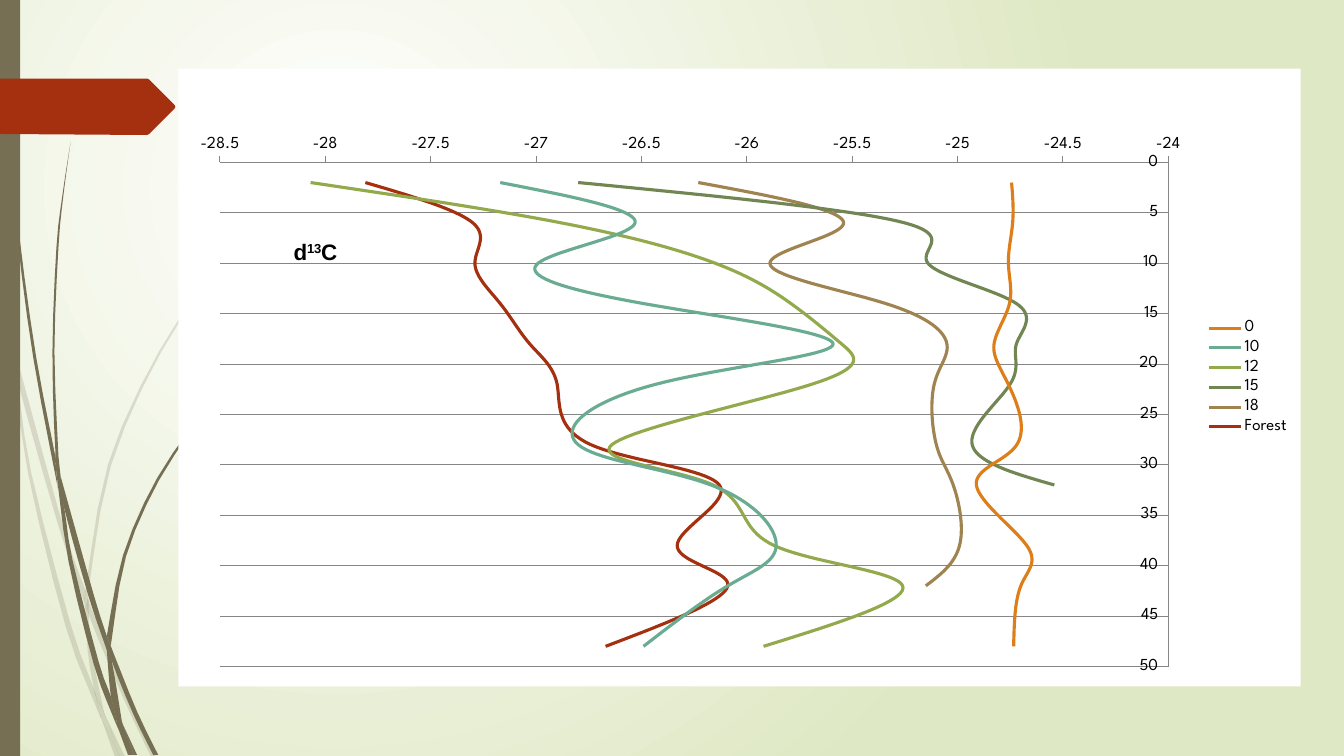
from lxml import etree
from pptx import Presentation
from pptx import util as u
from pptx.chart import data
from pptx.dml import color
from pptx.enum import chart as ec, shapes
from pptx.oxml import ns

THEME = {
    "white": "FFFFFF", "pale": "DFE8C4", "bark": "766F54", "red": "A53010",
    "ink": "000000", "grid": "868686",
    "lines": ["DE7E18", "6AAC91", "92AA4C", "728653", "9F8351", "A53010"],
    "font": "League Spartan", "head": "Arial",
    "base": 10, "label": 12, "title": 16, "stroke": 2.25, "thin": 0.75,
}

FAINT = [
    ([(.11, 3.5), (.09, 3.22), (0, 2.82)], [(0, 2.99), (.1, 3.44), (.11, 3.5)]),
    ([(.14, 3.45), (.17, 3.76), (.58, 5.22), (.84, 5.99)], [(.85, 5.86), (.62, 5.2), (.14, 3.45)]),
    ([(.88, 5.96), (.88, 6.1), (1.23, 6.94), (1.5, 7.51)], [(1.55, 7.51), (1.27, 6.92), (.92, 6.07)]),
    ([(1.05, 7.11), (1.19, 7.51)], [(1.24, 7.51), (1.05, 7.11)]),
    ([(.11, 3.5), (.28, 4.7), (.65, 6.21), (.92, 6.93), (1.01, 7.14)],
     [(.99, 7.07), (.93, 6.83), (.7, 6.19), (.31, 4.69), (.17, 3.76), (.11, 3.5)]),
    ([(.84, 5.99), (.87, 6.46), (.93, 6.83), (.96, 6.92), (1.05, 7.11)],
     [(1.03, 7.06), (.91, 6.46), (.88, 6.1), (.88, 6.08)]),
    ([(3.12, 1.53), (2.89, 1.75), (2.68, 1.97), (2.28, 2.44), (1.58, 3.48), (1.07, 4.61),
      (.85, 5.84), (.85, 5.86)],
     [(.88, 5.96), (.88, 5.84), (1.1, 4.62), (1.6, 3.49), (2.29, 2.45), (2.68, 1.98),
      (2.9, 1.75), (3.12, 1.54)]),
    ([(1.01, 7.14), (1.14, 7.51)], [(1.19, 7.51), (1.01, 7.14)]),
    ([(.85, 5.86), (.84, 5.99), (.88, 6.08)], [(.88, 6.1), (.88, 5.96)]),
    ([(.93, 6.83), (.99, 7.07), (1.01, 7.14), (1.19, 7.51)], [(1.19, 7.51), (1.05, 7.11), (.96, 6.92)]),
]
DARK = [
    ([(.03, 0), (.04, .48), (.07, 1.1), (.17, 2.33), (.33, 3.55), (.56, 4.77), (.57, 4.81)],
     [(.55, 4.57), (.55, 4.53), (.36, 3.55), (.19, 2.32), (.08, 1.09), (.05, .48), (.04, 0)]),
    ([(.6, 4.72), (.64, 5.05), (.88, 5.92), (1.06, 6.45)], [(1.06, 6.31), (.93, 5.9), (.6, 4.72)]),
    ([(1.1, 6.41), (1.11, 6.56), (1.32, 7.08), (1.52, 7.49)], [(1.57, 7.49), (1.36, 7.06), (1.13, 6.49)]),
    ([(.57, 4.77), (.68, 5.57), (.93, 6.59), (1.11, 7.08), (1.17, 7.22)],
     [(1.16, 7.17), (1.1, 6.91), (.98, 6.57), (.72, 5.56), (.64, 5.05), (.57, 4.77)]),
    ([(.7, 1.41), (.62, 1.93), (.56, 2.45), (.52, 3.49), (.55, 4.49), (.6, 4.72)],
     [(.58, 4.53), (.54, 3.49), (.58, 2.45), (.63, 1.93), (.7, 1.41)]),
    ([(1.22, 7.19), (1.33, 7.49)], [(1.36, 7.49), (1.22, 7.19)]),
    ([(.55, 4.49), (.55, 4.53), (.57, 4.77), (.64, 5.05)], [(.6, 4.72), (.55, 4.49)]),
    ([(2.6, 3.44), (2.45, 3.58), (2.31, 3.73), (2.04, 4.05), (1.56, 4.74), (1.22, 5.51), (1.06, 6.31)],
     [(1.1, 6.41), (1.11, 6.33), (1.25, 5.52), (1.58, 4.76), (2.05, 4.06), (2.31, 3.74),
      (2.45, 3.59), (2.61, 3.44)]),
    ([(1.17, 7.22), (1.27, 7.49)], [(1.31, 7.49), (1.17, 7.22)]),
    ([(1.06, 6.45), (1.1, 6.91), (1.16, 7.06), (1.22, 7.19)], [(1.21, 7.16), (1.11, 6.56), (1.06, 6.45)]),
    ([(1.06, 6.31), (1.06, 6.45), (1.11, 6.56)], [(1.1, 6.41), (1.06, 6.31)]),
    ([(1.1, 6.91), (1.16, 7.17), (1.17, 7.22), (1.3, 7.49)], [(1.33, 7.49), (1.22, 7.19), (1.1, 6.91)]),
]
ARROW = [(0, .78), (1.46, .78), (1.48, .79), (1.73, 1.04), (1.74, 1.06), (1.73, 1.08),
         (1.48, 1.33), (1.46, 1.34), (0, 1.33)]

DEPTHS = [2, 6, 10, 14, 18, 22, 28, 32, 38, 42, 48]
CARBON = {
    "0": [-24.743, -24.738, -24.758, -24.753, -24.826, -24.759, -24.718, -24.91, -24.671,
          -24.699, -24.733],
    "10": [-27.17, -26.53, -26.99, -26.49, -25.59, -26.43, -26.8, -26.17, -25.86, -26.09, -26.49],
    "12": [-28.07, -26.88, -26.15, -25.79, -25.55, -25.69, -26.64, -26.16, -25.87, -25.26, -25.92],
    "15": [-26.8, -25.25, -25.14, -24.72, -24.72, -24.75, -24.93, -24.54],
    "18": [-26.23, -25.54, -25.89, -25.34, -25.05, -25.11, -25.1, -25.02, -24.99, -25.15],
    "Forest": [-27.81, -27.3, -27.29, -27.17, -27.03, -26.9, -26.74, -26.13, -26.33, -26.09, -26.67],
}


def rgb(name):
    return color.RGBColor.from_string(THEME.get(name, name))


def assign(item, values):
    for key, value in values.items():
        setattr(item, key, value)


def smooth(pts, steps=3):
    ends = [pts[0], *pts, pts[-1]]
    out = [pts[0]]
    for a, b, c, d in zip(ends, ends[1:], ends[2:], ends[3:]):
        for n in range(1, steps + 1):
            t = n / steps
            out.append(tuple(
                (2 * q + (r - p) * t + (2 * p - 5 * q + 4 * r - s) * t ** 2
                 + (3 * q - p - 3 * r + s) * t ** 3) / 2
                for p, q, r, s in zip(a, b, c, d)))
    return out


def place(node, index, **box):
    for old in node.findall(ns.qn("c:layout")):
        node.remove(old)
    layout = etree.Element(ns.qn("c:layout"))
    node.insert(index, layout)
    manual = etree.SubElement(layout, ns.qn("c:manualLayout"))
    for key, value in box.items():
        etree.SubElement(manual, ns.qn("c:" + key)).set("val", str(value))


class Deck:
    def __init__(self):
        self.prs = Presentation()
        assign(self.prs, {"slide_width": u.Inches(13.33), "slide_height": u.Inches(7.5)})
        self.slide = self.prs.slides.add_slide(self.prs.slide_layouts[6])

    def glow(self, inner, outer):
        fill = self.slide.background.fill
        fill.gradient()
        for stop, name, pos in zip(fill.gradient_stops, (inner, outer), (0, 1)):
            assign(stop, {"position": pos})
            stop.color.rgb = rgb(name)
        lin = self.slide.element.find(".//" + ns.qn("a:lin"))
        ring = etree.Element(ns.qn("a:path"), path="circle")
        etree.SubElement(ring, ns.qn("a:fillToRect"), l="50000", t="50000", r="100000", b="100000")
        lin.getparent().replace(lin, ring)

    def paint(self, shape, name, alpha=100):
        shape.shadow.inherit = False
        shape.fill.solid()
        shape.fill.fore_color.rgb = rgb(name)
        shape.line.fill.background()
        if alpha < 100:
            tint = shape.element.spPr.find(".//" + ns.qn("a:srgbClr"))
            etree.SubElement(tint, ns.qn("a:alpha")).set("val", str(alpha * 1000))

    def outline(self, spots, name, alpha=100):
        pts = [(u.Inches(x), u.Inches(y)) for x, y in spots]
        form = self.slide.shapes.build_freeform(*pts[0])
        form.add_line_segments(pts[1:])
        self.paint(form.convert_to_shape(), name, alpha)

    def block(self, kind, box, name):
        self.paint(self.slide.shapes.add_shape(kind, *map(u.Inches, box)), name)

    def stroke(self, line, name, width):
        line.color.rgb = rgb(name)
        line.width = u.Pt(width)

    def font(self, font, size, **more):
        assign(font, {"size": u.Pt(size), "name": THEME["font"], **more})
        font.color.rgb = rgb("ink")

    def axis(self, axis, low, high, step, **more):
        assign(axis, {"minimum_scale": low, "maximum_scale": high, "major_unit": step,
                      "major_tick_mark": ec.XL_TICK_MARK.OUTSIDE,
                      "minor_tick_mark": ec.XL_TICK_MARK.NONE, **more})
        assign(axis.tick_labels, {"number_format": "General", "number_format_is_linked": False})
        self.font(axis.tick_labels.font, THEME["label"])
        self.stroke(axis.format.line, "grid", THEME["thin"])

    def title(self, chart):
        chart.has_title = True
        para = chart.chart_title.text_frame.paragraphs[0]
        for part, lift in (("d", 0), ("13", 30000), ("C", 0)):
            run = para.add_run()
            run.text = part
            self.font(run.font, THEME["title"], name=THEME["head"], bold=True)
            if lift:
                run._r.get_or_add_rPr().set("baseline", str(lift))
        node = chart.chart_title._element
        node.find(ns.qn("c:overlay")).set("val", "1")
        place(node, 1, xMode="edge", yMode="edge", x=.1, y=.27)

    def chart(self, box):
        pool = data.XyChartData()
        for name, values in CARBON.items():
            row = pool.add_series(name)
            for x, y in zip(values, DEPTHS):
                row.add_data_point(x, y)
        chart = self.slide.shapes.add_chart(
            ec.XL_CHART_TYPE.XY_SCATTER_SMOOTH_NO_MARKERS, *map(u.Inches, box), pool).chart
        self.font(chart.font, THEME["base"])
        self.axis(chart.category_axis, -28.5, -24, .5, has_major_gridlines=False)
        self.axis(chart.value_axis, 0, 50, 5, has_major_gridlines=True, reverse_order=True)
        self.stroke(chart.value_axis.major_gridlines.format.line, "grid", THEME["thin"])
        chart.has_legend = True
        assign(chart.legend, {"position": ec.XL_LEGEND_POSITION.RIGHT, "include_in_layout": False})
        self.font(chart.legend.font, THEME["label"])
        chart.plots[0].vary_by_categories = False
        for row, tint in zip(chart.plots[0].series, THEME["lines"]):
            self.stroke(row.format.line, tint, THEME["stroke"])
        root = chart.element.find(ns.qn("c:chart"))
        for bend in root.iter(ns.qn("c:smooth")):
            bend.set("val", "1")
        self.title(chart)
        place(root.find(ns.qn("c:plotArea")), 0, layoutTarget="inner", xMode="edge",
              yMode="edge", x=.037, y=.152, w=.845, h=.816)
        area = etree.Element(ns.qn("c:spPr"))
        solid = etree.SubElement(area, ns.qn("a:solidFill"))
        etree.SubElement(solid, ns.qn("a:srgbClr")).set("val", THEME["white"])
        etree.SubElement(etree.SubElement(area, ns.qn("a:ln")), ns.qn("a:noFill"))
        root.addnext(area)


def main():
    deck = Deck()
    deck.glow("white", "pale")
    for group, alpha in ((FAINT, 20), (DARK, 100)):
        for left, right in group:
            deck.outline(smooth(left) + smooth(right), "bark", alpha)
    deck.block(shapes.MSO_SHAPE.RECTANGLE, (0, 0, .2, 7.5), "bark")
    deck.outline(ARROW, "red")
    deck.chart((1.77, .68, 11.13, 6.13))
    deck.prs.save("out.pptx")


if __name__ == "__main__":
    main()
